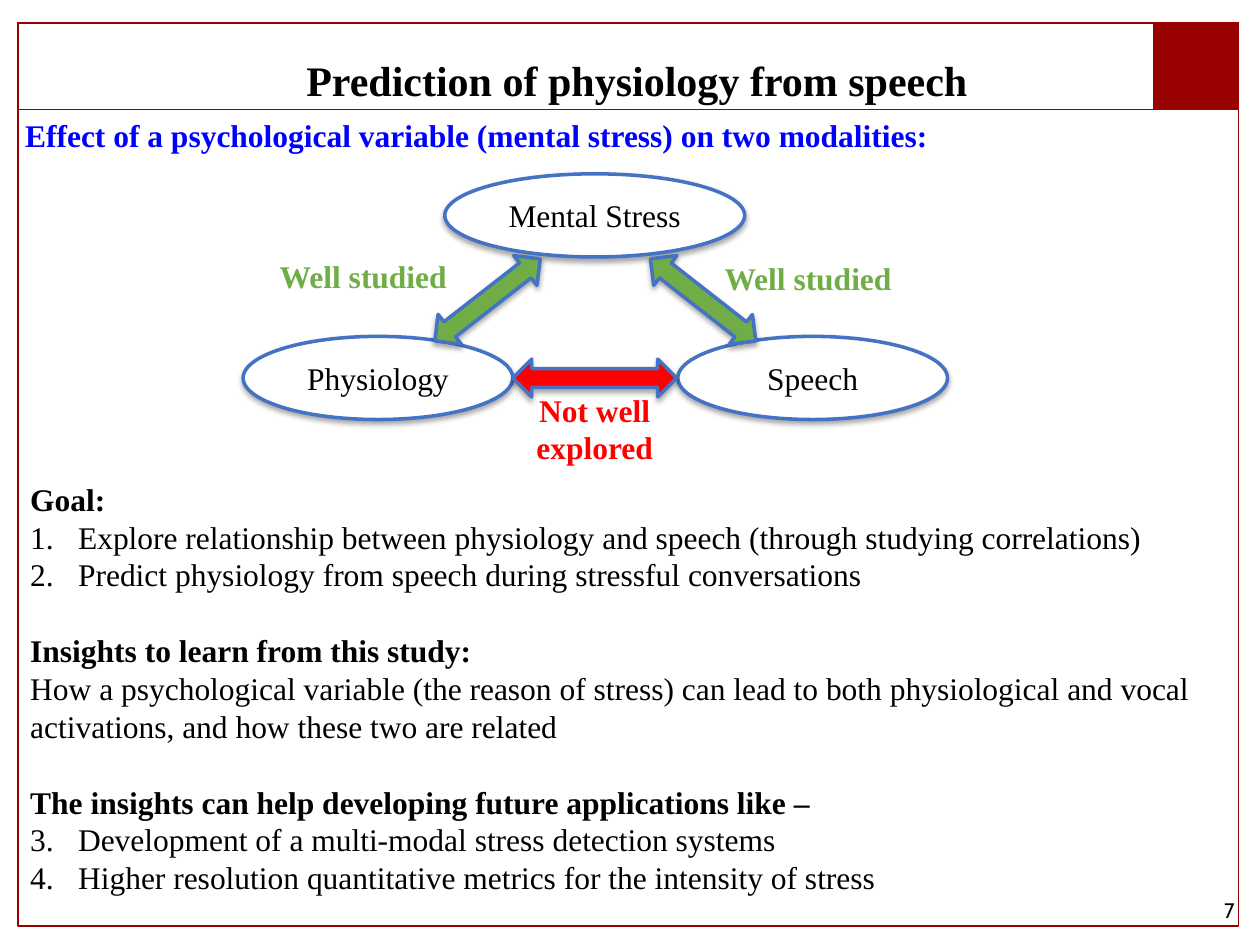
import pptx
import pptx.util
import pptx.dml.color
import pptx.enum.shapes
import pptx.enum.text
import pptx.oxml
import pptx.oxml.ns

Inches, Pt = pptx.util.Inches, pptx.util.Pt
SHAPE = pptx.enum.shapes.MSO_SHAPE
ALIGN = pptx.enum.text.PP_ALIGN
ANCHOR = pptx.enum.text.MSO_ANCHOR

THEME = {
    "font": "Times New Roman", "number_font": "Cabin",
    "title": 24, "body": 18, "number": 12, "gap": 21.7,
    "black": "000000", "white": "FFFFFF", "maroon": "990000", "blue": "0000FF",
    "outline": "4472C4", "green": "70AD47", "red": "FF0000",
}
WIDTH, HEIGHT = 10, 7.5
MARGIN, TOP, FRAME_W, FRAME_H, BAND = 0.14, 0.18, 9.69, 7.17, 0.69
CORNER = 0.67

TITLE = "Prediction of physiology from speech"
SUBTITLE = "Effect of a psychological variable (mental stress) on two modalities:"
NODE_H, ARROW_H = 0.66, 0.3
NODES = [  # text, left, top, width
    ("Physiology", 1.93, 2.67, 2.14),
    ("Speech", 5.38, 2.67, 2.14),
    ("Mental Stress", 3.53, 1.38, 2.38),
]
ARROWS = [  # left, top, width, rotation, colour
    (3.34, 2.23, 1.06, 322.1, "green"),
    (5.05, 2.23, 1.06, 218, "green"),
    (4.07, 2.85, 1.3, 180, "red"),
]
LABELS = [  # text, box, colour, alignment
    ("Well studied", (2.17, 1.99, 1.71, 0.47), "green", ALIGN.LEFT),
    ("Well studied", (5.7, 2.01, 1.71, 0.47), "green", ALIGN.LEFT),
    ("Not well explored", (4.03, 3.05, 1.38, 0.71), "red", ALIGN.CENTER),
]
SECTIONS = [  # heading, lines, first list number (None for plain text)
    ("Goal:", [
        "Explore relationship between physiology and speech (through studying correlations)",
        "Predict physiology from speech during stressful conversations"], 1),
    ("Insights to learn from this study:", [
        "How a psychological variable (the reason of stress) can lead to both "
        "physiological and vocal activations, and how these two are related"], None),
    ("The insights can help developing future applications like –", [
        "Development of a multi-modal stress detection systems",
        "Higher resolution quantitative metrics for the intensity of stress"], 3),
]


def rgb(name):
    return pptx.dml.color.RGBColor.from_string(THEME[name])


def style(p, size="body", color="black", bold=False, align=ALIGN.LEFT, font="font"):
    p.alignment = align
    for r in p.runs:
        r.font.name, r.font.size, r.font.bold = THEME[font], Pt(THEME[size]), bold
        r.font.color.rgb = rgb(color)


def set_frame(s, anchor=ANCHOR.TOP, wrap=True):
    tf = s.text_frame
    tf.word_wrap, tf.vertical_anchor = wrap, anchor
    tf.margin_left = tf.margin_right = tf.margin_top = tf.margin_bottom = Inches(0.05)
    return tf


def add_text(sp, box, text, anchor=ANCHOR.TOP, wrap=True, **look):
    tf = set_frame(sp.add_textbox(*map(Inches, box)), anchor, wrap)
    tf.text = text
    style(tf.paragraphs[0], **look)
    return tf.paragraphs[0]


def add_shape(sp, kind, box, fill=None, line="outline", width=2):
    s = sp.add_shape(kind, *map(Inches, box))
    s.shadow.inherit = False
    if fill:
        s.fill.solid()
        s.fill.fore_color.rgb = rgb(fill)
    else:
        s.fill.background()
    s.line.color.rgb, s.line.width = rgb(line), Pt(width)
    return s


def drop_shadow(s):
    effects = s._element.spPr.find(pptx.oxml.ns.qn("a:effectLst"))
    effects.append(pptx.oxml.parse_xml(
        f'<a:outerShdw {pptx.oxml.ns.nsdecls("a")} blurRad="{Pt(3)}" dist="{Pt(1.8)}" '
        'dir="5400000" rotWithShape="0"><a:srgbClr val="000000">'
        '<a:alpha val="35000"/></a:srgbClr></a:outerShdw>'))


def number(p, start):
    pPr = p._p.get_or_add_pPr()
    pPr.set("marL", str(Inches(0.38)))
    pPr.set("indent", str(-Inches(0.38)))
    pPr.append(pptx.oxml.parse_xml(
        f'<a:buAutoNum {pptx.oxml.ns.nsdecls("a")} type="arabicPeriod" startAt="{start}"/>'))


def add_frame(sp):
    for box, fill in [
        ((MARGIN, TOP, FRAME_W, FRAME_H), None),
        ((MARGIN, TOP, FRAME_W, BAND), None),
        ((MARGIN + FRAME_W - CORNER, TOP, CORNER, BAND), "maroon"),
    ]:
        add_shape(sp, SHAPE.RECTANGLE, box, fill, "maroon", 1)


def add_diagram(sp):
    for text, x, y, w in NODES:
        s = add_shape(sp, SHAPE.OVAL, (x, y, w, NODE_H), "white")
        drop_shadow(s)
        tf = set_frame(s, ANCHOR.MIDDLE)
        tf.text = text
        style(tf.paragraphs[0], align=ALIGN.CENTER)
    for x, y, w, angle, color in ARROWS:
        s = add_shape(sp, SHAPE.LEFT_RIGHT_ARROW, (x, y, w, ARROW_H), color)
        s.rotation = angle
        drop_shadow(s)
    for text, box, color, align in LABELS:
        add_text(sp, box, text, color=color, bold=True, align=align)


def add_sections(sp):
    tf = set_frame(sp.add_textbox(*map(Inches, (0.19, 3.76, 9.63, 3.74))))
    for i, (heading, lines, start) in enumerate(SECTIONS):
        p = tf.add_paragraph() if i else tf.paragraphs[0]
        p.text = heading
        if i:
            p.space_before = Pt(THEME["gap"])
        style(p, bold=True)
        for line in lines:
            p = tf.add_paragraph()
            p.text = line
            if start:
                number(p, start)
            style(p)


def main():
    prs = pptx.Presentation()
    prs.slide_width, prs.slide_height = Inches(WIDTH), Inches(HEIGHT)
    sp = prs.slides.add_slide(prs.slide_layouts[6]).shapes
    add_frame(sp)
    p = add_text(sp, (2.31, TOP, 5.49, BAND), TITLE, size="title", bold=True,
                 align=ALIGN.CENTER)
    p.line_spacing = 1.5
    add_text(sp, (7.52, 7.02, 2.33, 0.4), "7", ANCHOR.MIDDLE, size="number",
             align=ALIGN.RIGHT, font="number_font")
    add_text(sp, (0.15, TOP + BAND, 9.7, 0.4), SUBTITLE, color="blue", bold=True)
    add_diagram(sp)
    add_sections(sp)
    prs.save("out.pptx")


if __name__ == "__main__":
    main()
